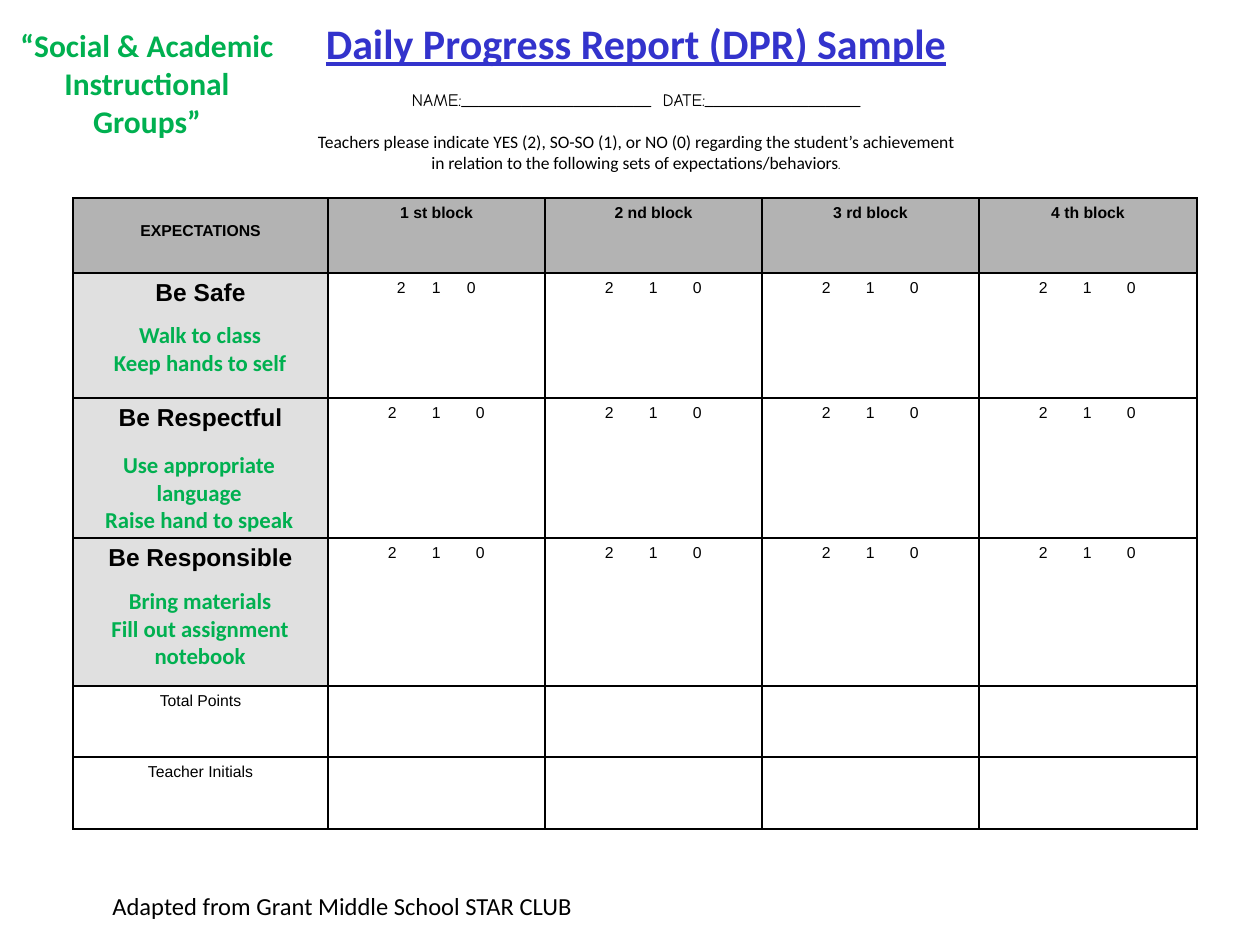
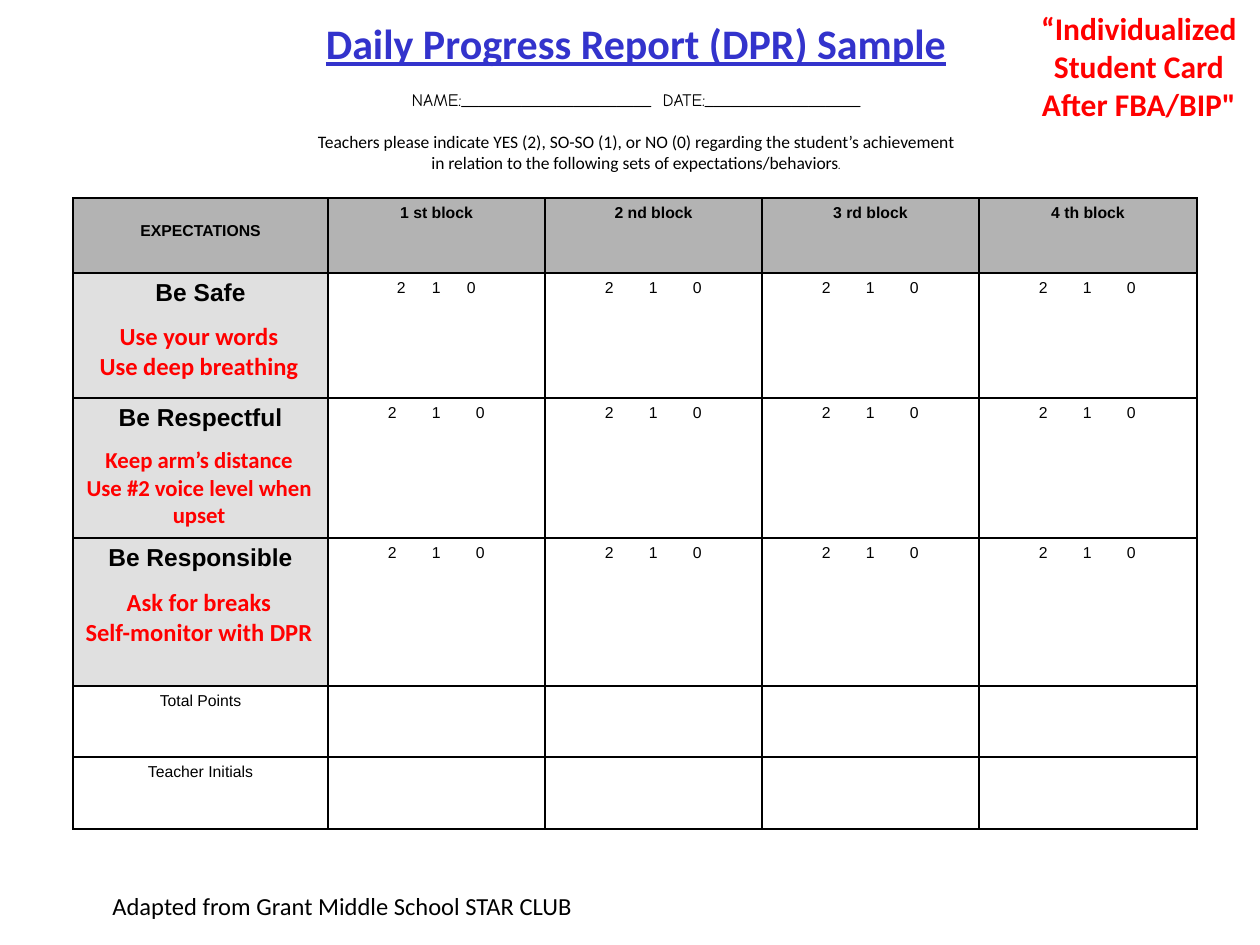
from lxml.etree import SubElement
from pptx import Presentation
from pptx.dml.color import RGBColor
from pptx.enum.text import MSO_ANCHOR, MSO_AUTO_SIZE, PP_ALIGN
from pptx.oxml import parse_xml
from pptx.oxml.ns import nsdecls, qn
from pptx.util import Emu, Pt

HEX = {
    "title": "3333CC",
    "ink": "000000",
    "head": "B3B3B3",
    "side": "E0E0E0",
    "group": "00B050",
    "single": "FF0000",
}
BODY, GRID, HAND = "Calibri", "Arial", "Comic Neue"
COLS = [255, 217, 217, 217, 218]
ROWS = [75, 125, 140, 148, 71, 72]
BLOCKS = ["1 st block", "2 nd block", "3 rd block", "4 th block"]
GOALS = ["Be Safe", "Be Respectful", "Be Responsible"]
TOTALS = ["Total Points", "Teacher Initials"]

CARDS = [
    {
        "hue": "group",
        "label": ("“Social & Academic Instructional Groups”", 0, 20, 294),
        "notes": [
            (["Walk to class", "Keep hands to self"], 74, 315, 13),
            (["Use appropriate language", "Raise hand to speak"], 73, 445, 13),
            (["Bring materials", "Fill out assignment notebook"], 74, 581, 13),
        ],
    },
    {
        "hue": "single",
        "label": ("“Individualized Student Card After FBA/BIP\"", 1018, 3, 242),
        "notes": [
            (["Use your words", "Use deep breathing"], 73, 315, 14),
            (["Keep arm’s distance", "Use #2 voice level when upset"], 73, 440, 13),
            (["Ask for breaks", "Self-monitor with DPR"], 73, 581, 14),
        ],
    },
]


def px(size):
    return Emu(round(size * 914400 / 126))


class Deck:
    def __init__(self):
        self.show = Presentation()
        self.show.slide_width, self.show.slide_height = px(1260), px(945)
        self.slide = None

    def page(self):
        self.slide = self.show.slides.add_slide(self.show.slide_layouts[5])

    def style(self, run, size, hue="ink", font=BODY, bold=False, line=False):
        face = run.font
        face.name, face.size = font, Pt(size)
        face.bold, face.underline = bold, line
        face.color.rgb = RGBColor.from_string(HEX[hue])

    def fill_in(self, para, text, size, align=PP_ALIGN.CENTER, **look):
        para.text = text
        para.alignment = align
        for run in para.runs:
            self.style(run, size, **look)

    def title(self):
        shape = self.slide.shapes.title
        shape.left, shape.top = px(299), px(11)
        shape.width, shape.height = px(674), px(168)
        frame = shape.text_frame
        frame.auto_size = MSO_AUTO_SIZE.NONE
        frame.vertical_anchor = MSO_ANCHOR.TOP
        frame.word_wrap = False
        head = frame.paragraphs[0]
        name, guide = frame.add_paragraph(), frame.add_paragraph()
        self.fill_in(head, "Daily Progress Report (DPR) Sample", 24,
                     hue="title", bold=True, line=True)
        self.fill_in(name, f"NAME:{'_' * 22}  DATE:{'_' * 18}", 10, font=HAND)
        self.fill_in(guide, "Teachers please indicate YES (2), SO-SO (1), or NO (0) "
                     "regarding the student’s achievement\v"
                     "in relation to the following sets of expectations/behaviors", 10)
        stop = guide.add_run()
        stop.text = "."
        self.style(stop, 9, font=HAND)
        name.space_before = guide.space_before = Pt(12)

    def text(self, lines, left, top, wide, high, size, **look):
        box = self.slide.shapes.add_textbox(px(left), px(top), px(wide), px(high))
        frame = box.text_frame
        frame.word_wrap = True
        for spot, line in enumerate(lines):
            para = frame.add_paragraph() if spot else frame.paragraphs[0]
            self.fill_in(para, line, size, **look)

    def edge(self, cell):
        props = cell._tc.get_or_add_tcPr()
        for spot, side in enumerate("LRTB"):
            props.insert(spot, parse_xml(
                f'<a:ln{side} {nsdecls("a")} w="12700"><a:solidFill>'
                f'<a:srgbClr val="{HEX["ink"]}"/></a:solidFill></a:ln{side}>'))

    def cell(self, cell, text="", size=9, fill=None, bold=False):
        if fill:
            cell.fill.solid()
            cell.fill.fore_color.rgb = RGBColor.from_string(HEX[fill])
        else:
            cell.fill.background()
        self.edge(cell)
        if text:
            self.fill_in(cell.text_frame.paragraphs[0], text, size, font=GRID, bold=bold)

    def score(self, cell, inset, step):
        self.cell(cell)
        cell.margin_left = px(inset)
        para = cell.text_frame.paragraphs[0]
        self.fill_in(para, "2\t1\t0", 9, align=PP_ALIGN.LEFT, font=GRID)
        tabs = SubElement(para._p.get_or_add_pPr(), qn("a:tabLst"))
        for stop in (step, 2 * step):
            SubElement(tabs, qn("a:tab"), pos=str(px(stop)), algn="l")

    def table(self):
        frame = self.slide.shapes.add_table(
            len(ROWS), len(COLS), px(73), px(198), px(sum(COLS)), px(sum(ROWS)))
        grid = frame.table
        grid.first_row = grid.horz_banding = False
        for col, wide in zip(grid.columns, COLS):
            col.width = px(wide)
        for row, high in zip(grid.rows, ROWS):
            row.height = px(high)
        for col, text in enumerate(["EXPECTATIONS"] + BLOCKS):
            self.cell(grid.cell(0, col), text, fill="head", bold=True)
        grid.cell(0, 0).margin_top = px(24)
        for row, goal in enumerate(GOALS, 1):
            self.cell(grid.cell(row, 0), goal, 14, "side", True)
            for col in range(1, len(COLS)):
                tight = row == col == 1
                self.score(grid.cell(row, col), *((69, 35) if tight else (60, 44)))
        for row, total in enumerate(TOTALS, len(GOALS) + 1):
            for col in range(len(COLS)):
                self.cell(grid.cell(row, col), "" if col else total)

    def card(self, hue, label, notes):
        self.page()
        self.title()
        self.table()
        self.text(["Adapted from Grant Middle School STAR CLUB"],
                  100, 885, 520, 42, 14, align=PP_ALIGN.LEFT)
        text, left, top, wide = label
        self.text([text], left, top, wide, 127, 18, hue=hue, bold=True)
        for lines, left, top, size in notes:
            self.text(lines, left, top, 252, 96, size, hue=hue, bold=True)


def main():
    deck = Deck()
    for card in CARDS:
        deck.card(**card)
    deck.show.save("out.pptx")


if __name__ == "__main__":
    main()
